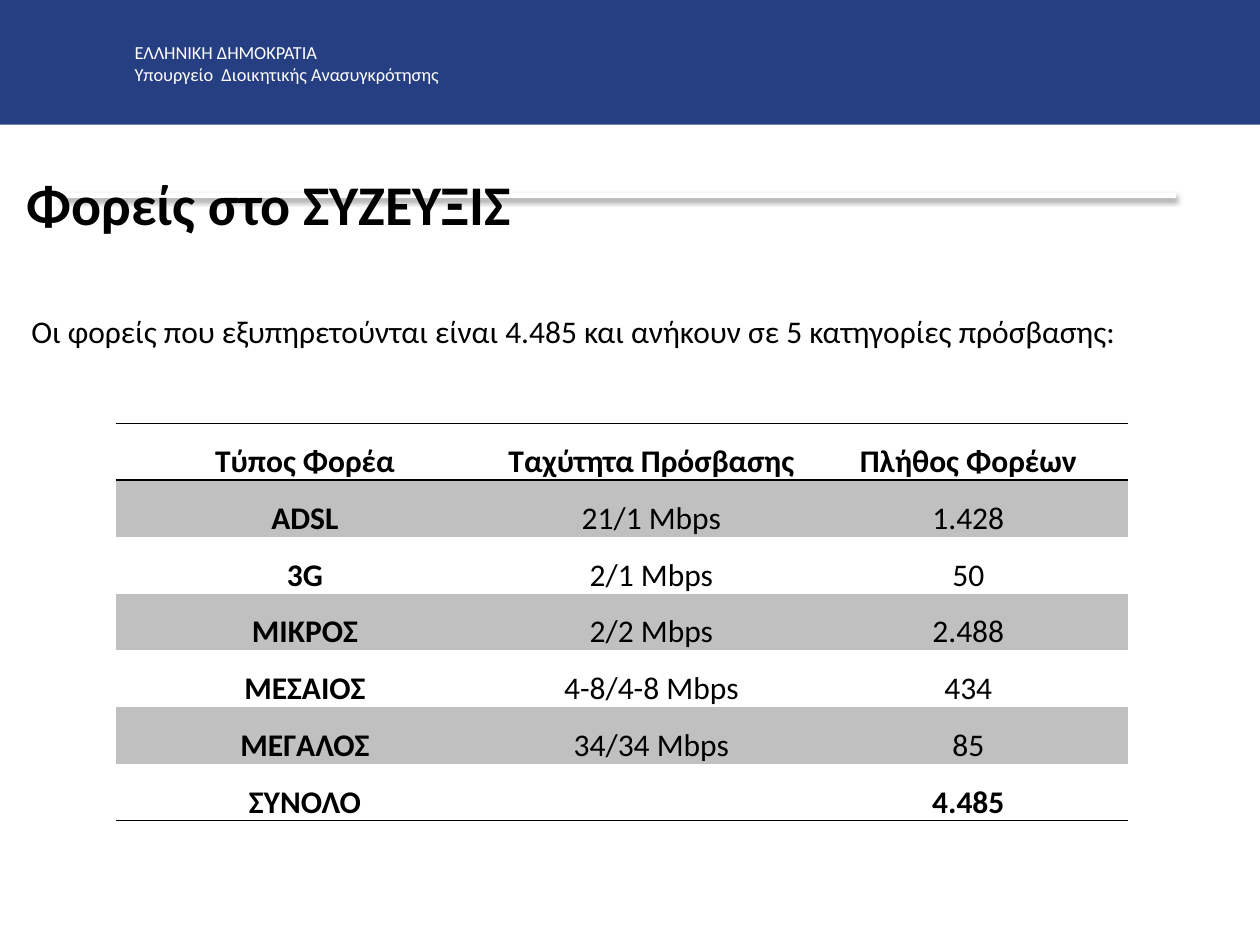
from dataclasses import dataclass

from lxml import etree
from pptx import Presentation
from pptx.dml.color import RGBColor
from pptx.enum.shapes import MSO_CONNECTOR, MSO_SHAPE
from pptx.enum.text import MSO_ANCHOR, MSO_AUTO_SIZE, PP_ALIGN
from pptx.oxml import parse_xml
from pptx.oxml.ns import nsdecls
from pptx.util import Inches, Pt

RECT = MSO_SHAPE.RECTANGLE
STRAIGHT = MSO_CONNECTOR.STRAIGHT
MIDDLE = MSO_ANCHOR.MIDDLE
FIXED = MSO_AUTO_SIZE.NONE
LEFT, CENTER = PP_ALIGN.LEFT, PP_ALIGN.CENTER


@dataclass(frozen=True)
class Theme:
    font: str = "Calibri"
    band: RGBColor = RGBColor(0x26, 0x3E, 0x82)
    stripe: RGBColor = RGBColor(0xC0, 0xC0, 0xC0)
    light: RGBColor = RGBColor(0xFF, 0xFF, 0xFF)
    dark: RGBColor = RGBColor(0, 0, 0)
    title: float = 32
    body: float = 18
    header: float = 10.5


THEME = Theme()


def style(p, size, color, bold=False, align=LEFT):
    p.alignment = align
    p.font.name = THEME.font
    p.font.size = Pt(size)
    p.font.bold = bold
    p.font.color.rgb = color


def set_borders(cell, top, bottom):
    """Draw 1 pt rules on the chosen edges and none elsewhere."""
    tcPr = cell._tc.get_or_add_tcPr()
    edges = (("lnL", False), ("lnR", False), ("lnT", top), ("lnB", bottom))
    for i, (tag, shown) in enumerate(edges):
        paint = (f'<a:solidFill><a:srgbClr val="{THEME.dark}"/></a:solidFill>'
                 if shown else "<a:noFill/>")
        tcPr.insert(i, parse_xml(
            f'<a:{tag} {nsdecls("a")} w="{Pt(1)}">{paint}</a:{tag}>'))


prs = Presentation()
prs.slide_width, prs.slide_height = Inches(10), Inches(7.5)
W, H = prs.slide_width, prs.slide_height
s = prs.slides.add_slide(prs.slide_layouts[5])
title = s.shapes.title

# Header band
band = s.shapes.add_shape(RECT, 0, 0, W, Inches(0.99))
band.shadow.inherit = False
band.fill.solid()
band.fill.fore_color.rgb = THEME.band
band.line.fill.background()

header = s.shapes.add_textbox(Inches(0.97), Inches(0.28), Inches(4.03), Inches(0.5))
tf = header.text_frame
tf.word_wrap = True
tf.text = "ΕΛΛΗΝΙΚΗ ΔΗΜΟΚΡΑΤΙΑ\nΥπουργείο  Διοικητικής Ανασυγκρότησης"
for p in tf.paragraphs:
    style(p, THEME.header, THEME.light)

# White rule, seen by its shadow
rule = s.shapes.add_connector(STRAIGHT, Inches(0.49), Inches(1.55),
                              Inches(9.33), Inches(1.55))
rule.line.color.rgb = THEME.light
rule.line.width = Pt(3)
effects = etree.fromstring(
    f'<a:effectLst {nsdecls("a")}>'
    f'<a:outerShdw blurRad="{Pt(3.1)}" dist="{Pt(1.8)}" dir="5400000" rotWithShape="0">'
    f'<a:srgbClr val="{THEME.dark}"><a:alpha val="35000"/></a:srgbClr>'
    '</a:outerShdw></a:effectLst>')
rule._element.spPr.append(effects)

# Title, in front of the rule
s.shapes._spTree.append(title._element)
title.left, title.top = Inches(0.11), Inches(1.23)
title.width, title.height = Inches(9.04), Inches(0.77)
tf = title.text_frame
tf.auto_size = FIXED
tf.vertical_anchor = MIDDLE
tf.text = "Φορείς στο ΣΥΖΕΥΞΙΣ"
style(tf.paragraphs[0], THEME.title, THEME.dark, bold=True)

intro = s.shapes.add_textbox(Inches(0.15), Inches(2.43), Inches(9.57), Inches(0.4))
tf = intro.text_frame
tf.word_wrap = True
tf.vertical_anchor = MIDDLE
tf.text = "Οι φορείς που εξυπηρετούνται είναι 4.485 και ανήκουν σε 5 κατηγορίες πρόσβασης:"
style(tf.paragraphs[0], THEME.body, THEME.dark, align=PP_ALIGN.JUSTIFY)

# Table of access categories
rows = [
    ("Τύπος Φορέα", "Ταχύτητα Πρόσβασης", "Πλήθος Φορέων"),
    ("ADSL", "21/1 Mbps", "1.428"),
    ("3G", "2/1 Mbps", "50"),
    ("ΜΙΚΡΟΣ", "2/2 Mbps", "2.488"),
    ("ΜΕΣΑΙΟΣ", "4-8/4-8 Mbps", "434"),
    ("ΜΕΓΑΛΟΣ", "34/34 Mbps", "85"),
    ("ΣΥΝΟΛΟ", "", "4.485"),
]
widths = (3, 2.5, 2.53)
last = len(rows) - 1
table = s.shapes.add_table(len(rows), len(widths), Inches(0.92), Inches(3.36),
                           Inches(sum(widths)), Inches(0.45 * len(rows))).table
table.first_row = table.horz_banding = False
for column, width in zip(table.columns, widths):
    column.width = Inches(width)

for r, values in enumerate(rows):
    for c, value in enumerate(values):
        cell = table.cell(r, c)
        cell.margin_left = cell.margin_right = Inches(0.07)
        cell.margin_top = cell.margin_bottom = 0
        if r % 2:
            cell.fill.solid()
            cell.fill.fore_color.rgb = THEME.stripe
        else:
            cell.fill.background()
        set_borders(cell, top=r in (0, 1), bottom=r in (0, last))
        cell.text = value
        p = cell.text_frame.paragraphs[0]
        p.line_spacing = 1.5
        style(p, THEME.body, THEME.dark, bold=c == 0 or r in (0, last), align=CENTER)

prs.save("out.pptx")
